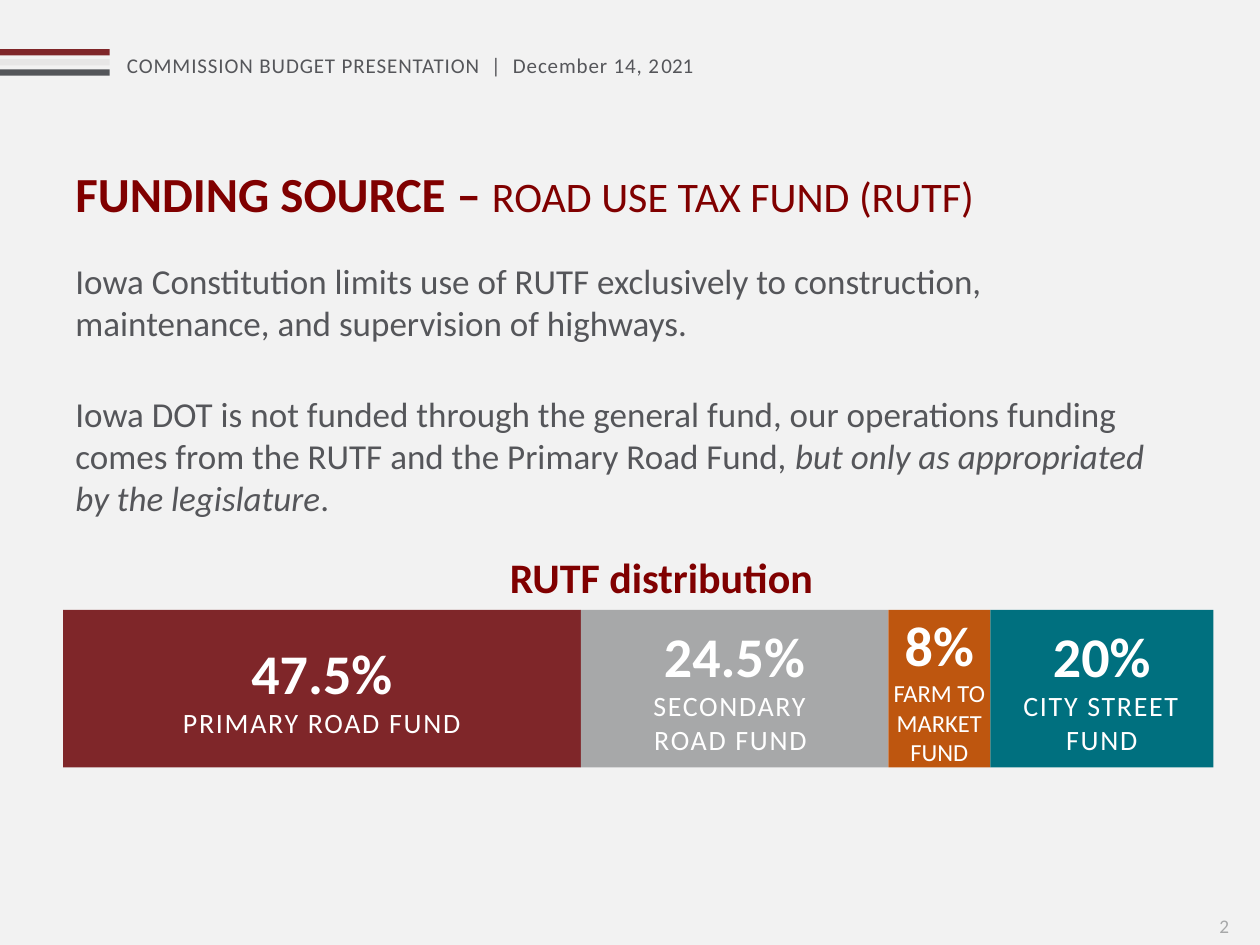
from dataclasses import dataclass
from itertools import accumulate

from pptx import Presentation
from pptx.dml.color import RGBColor
from pptx.enum.shapes import MSO_SHAPE as Shape
from pptx.enum.text import MSO_ANCHOR as Anchor, PP_ALIGN as Align
from pptx.util import Pt

EMU_PER_PX = 9144


@dataclass(frozen=True)
class Theme:
    """Colours, font and type sizes of the slide."""
    font: str = "Calibri"
    background: str = "F2F2F2"
    text: str = "55565A"
    title: str = "800000"
    white: str = "FFFFFF"
    maroon: str = "7F2629"
    pale: str = "E7E6E6"
    slate: str = "54565A"
    grey: str = "A7A8A9"
    orange: str = "BE560F"
    teal: str = "00707F"
    number_size: int = 11
    header_size: int = 12
    small_label_size: int = 14
    label_size: int = 16
    body_size: int = 20
    subtitle_size: int = 24
    title_size: int = 28
    percent_size: int = 32


THEME = Theme()


def px(value):
    """Turn px into EMU."""
    return value * EMU_PER_PX


def set_attributes(target, values):
    """Set each named attribute on the target."""
    for name, value in values.items():
        setattr(target, name, value)


def write_paragraph(paragraph, runs, color, **paragraph_format):
    """Write (text, font values, letter spacing) runs into a paragraph."""
    set_attributes(paragraph, paragraph_format)
    for text, font_values, spacing in runs:
        for index, line in enumerate(text.split("\v")):
            if index:
                paragraph.add_line_break()
            run = paragraph.add_run()
            run.text = line
            set_attributes(run.font, {"name": THEME.font, **font_values})
            run.font.color.rgb = RGBColor.from_string(color)
            if spacing:
                run._r.get_or_add_rPr().set("spc", str(spacing))


def add_text(slide, box, paragraphs, color, **paragraph_format):
    """Add a wrapping text box and write its paragraphs."""
    frame = slide.shapes.add_textbox(*map(px, box)).text_frame
    frame.word_wrap = True
    for index, runs in enumerate(paragraphs):
        paragraph = frame.add_paragraph() if index else frame.paragraphs[0]
        write_paragraph(paragraph, runs, color, **paragraph_format)
    return frame


def add_block(slide, box, color):
    """Add a flat rectangle without outline."""
    shape = slide.shapes.add_shape(Shape.RECTANGLE, *map(px, box))
    shape.shadow.inherit = False
    shape.fill.solid()
    shape.fill.fore_color.rgb = RGBColor.from_string(color)
    shape.line.fill.background()
    return shape


def add_header(slide, box):
    """Add the three stripes and the running header."""
    left, top, width, height = box
    for index, color in enumerate((THEME.maroon, THEME.pale, THEME.slate)):
        add_block(slide, (left, top + 2 + 8 * index, 87, 5), color)
    size = {"size": Pt(THEME.header_size)}
    runs = [("COMMISSION BUDGET PRESENTATION  |  December 14, 2", size, 50),
            ("021", size, 0)]
    add_text(slide, (left + 91, top, width - 91, height), [runs], THEME.text)


def add_title(slide, box):
    """Add the slide title."""
    runs = [("FUNDING SOURCE – ", {"size": Pt(THEME.title_size), "bold": True}, 0),
            ("ROAD USE TAX FUND (RUTF)", {"size": Pt(THEME.subtitle_size)}, 0)]
    add_text(slide, box, [runs], THEME.title)


def add_body(slide, box):
    """Add the two explanatory paragraphs."""
    size = {"size": Pt(THEME.body_size)}
    paragraphs = [
        [("Iowa Constitution limits use of RUTF exclusively to construction, "
          "maintenance, and supervision of highways.", size, 0)],
        [("Iowa DOT is not funded through the general fund, our operations funding "
          "comes from the RUTF and the Primary Road Fund, ", size, 0),
         ("but only as appropriated by the legislature", {**size, "italic": True}, 0),
         (".", size, 0)],
    ]
    frame = add_text(slide, box, paragraphs, THEME.text)
    frame.paragraphs[1].space_before = Pt(28)


def add_distribution(slide, box):
    """Add the heading and the bar of fund shares."""
    left, top, width, height = box
    heading = [("RUTF distribution", {"size": Pt(THEME.subtitle_size), "bold": True}, 0)]
    add_text(slide, (left + 18, top, width, 50), [heading], THEME.title, alignment=Align.CENTER)
    segments = [
        (411, THEME.maroon, "47.5%", "PRIMARY ROAD FUND", THEME.label_size, 100),
        (244, THEME.grey, "24.5%", "SECONDARY \vROAD FUND ", THEME.label_size, 100),
        (81, THEME.orange, "8%", "FARM TO MARKET FUND", THEME.small_label_size, 0),
        (177, THEME.teal, "20%", "CITY STREET FUND", THEME.label_size, 100),
    ]
    offsets = accumulate((segment[0] for segment in segments), initial=0)
    for offset, segment in zip(offsets, segments):
        segment_width, color, percent, label, label_size, spacing = segment
        segment_box = (left + offset, top + 51, segment_width, height - 51)
        frame = add_block(slide, segment_box, color).text_frame
        set_attributes(frame, {
            "word_wrap": True, "vertical_anchor": Anchor.MIDDLE,
            "margin_left": px(2), "margin_right": px(2),
            "margin_top": 0, "margin_bottom": 0,
        })
        percent_font = {"size": Pt(THEME.percent_size), "bold": True}
        write_paragraph(frame.paragraphs[0], [(percent, percent_font, 0)],
                        THEME.white, alignment=Align.CENTER)
        write_paragraph(frame.add_paragraph(), [(label, {"size": Pt(label_size)}, spacing)],
                        THEME.white, alignment=Align.CENTER)
        if segment_width > 150:
            set_attributes(frame, {"margin_left": px(10), "margin_right": px(10)})


def add_page_number(slide, box):
    """Add the page number."""
    add_text(slide, box, [[("2", {"size": Pt(THEME.number_size)}, 0)]], THEME.grey)


def main():
    """Build and save the slide."""
    presentation = Presentation()
    set_attributes(presentation, {"slide_width": px(1000), "slide_height": px(750)})
    slide = presentation.slides.add_slide(presentation.slide_layouts[6])
    slide.background.fill.solid()
    slide.background.fill.fore_color.rgb = RGBColor.from_string(THEME.background)
    add_header(slide, (0, 37, 575, 50))
    add_title(slide, (50, 125, 950, 76))
    add_body(slide, (50, 201, 889, 272))
    add_distribution(slide, (50, 433, 914, 176))
    add_page_number(slide, (958, 721, 42, 29))
    presentation.save("out.pptx")


if __name__ == "__main__":
    main()
